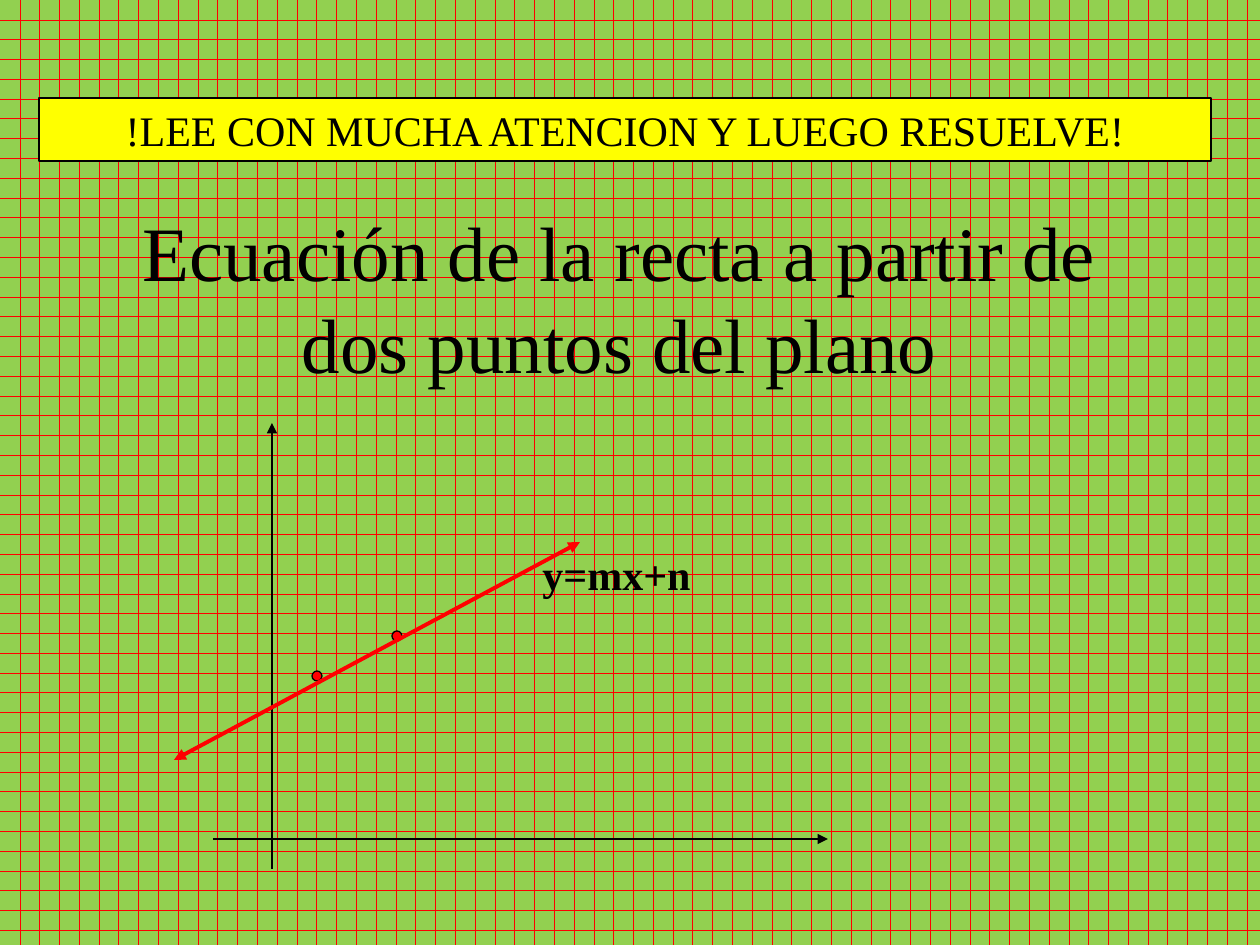
from lxml import etree
from pptx import Presentation
from pptx import util as u
from pptx.dml.color import RGBColor
from pptx.enum import dml, shapes, text
from pptx.oxml.ns import qn

PX = 914400 / 126
FONT = "Times New Roman"
BLACK, RED, YELLOW, GREEN = "000000", "FF0000", "FFFF00", "92D050"


def px(*lengths):
    return [u.Emu(round(n * PX)) for n in lengths]


def color(hex_code):
    return RGBColor.from_string(hex_code)


def set_background(s):
    fill = s.background.fill
    fill.patterned()
    fill.pattern = dml.MSO_PATTERN.DOTTED_GRID
    fill.fore_color.rgb = color(RED)
    fill.back_color.rgb = color(GREEN)


def write(shape, content, size, align, anchor, bold=False):
    tf = shape.text_frame
    tf.word_wrap = True
    tf.auto_size = text.MSO_AUTO_SIZE.NONE
    tf.vertical_anchor = anchor
    p = tf.paragraphs[0]
    p.text = content
    p.alignment = align
    p.font.name = FONT
    p.font.size = u.Pt(size)
    p.font.bold = bold
    p.font.color.rgb = color(BLACK)


def add_title(s, box, content):
    title = s.shapes.title
    title.left, title.top, title.width, title.height = px(*box)
    write(title, content, 44, text.PP_ALIGN.CENTER, text.MSO_ANCHOR.MIDDLE)


def add_arrow(s, ends, hex_code, weight, heads=("tailEnd",)):
    """Draw a straight line with a triangle at each end named in heads."""
    line = s.shapes.add_connector(shapes.MSO_CONNECTOR.STRAIGHT, *px(*ends))
    line.line.color.rgb = color(hex_code)
    line.line.width = u.Pt(weight)
    ln = line.line._get_or_add_ln()
    for head in heads:
        etree.SubElement(ln, qn(f"a:{head}"), type="triangle")
    etree.SubElement(line._element.spPr, qn("a:effectLst"))


def add_filled(s, kind, box, hex_code, weight):
    sp = s.shapes.add_shape(kind, *px(*box))
    sp.shadow.inherit = False
    sp.fill.solid()
    sp.fill.fore_color.rgb = color(hex_code)
    sp.line.color.rgb = color(BLACK)
    sp.line.width = u.Pt(weight)
    return sp


def main():
    prs = Presentation()
    prs.slide_width, prs.slide_height = px(1260, 945)
    s = prs.slides.add_slide(prs.slide_layouts[5])
    set_background(s)
    add_title(s, (84, 195, 1071, 203),
              "Ecuación de la recta a partir de dos puntos del plano")

    for axis in ((272, 869, 272, 423), (213, 839, 828, 839)):
        add_arrow(s, axis, BLACK, 0.75)
    for x, y in ((392, 631), (312, 671)):
        add_filled(s, shapes.MSO_SHAPE.OVAL, (x, y, 10, 10), RED, 0.75)
    add_arrow(s, (174, 760, 580, 542), RED, 2.25, ("headEnd", "tailEnd"))

    equation = s.shapes.add_textbox(*px(530, 542, 189, 63))
    write(equation, "y=mx+n", 24, text.PP_ALIGN.LEFT, text.MSO_ANCHOR.TOP, bold=True)

    banner = add_filled(s, shapes.MSO_SHAPE.RECTANGLE, (39, 98, 1172, 63), YELLOW, 1.5)
    write(banner, "!LEE CON MUCHA ATENCION Y LUEGO RESUELVE!", 24,
          text.PP_ALIGN.CENTER, text.MSO_ANCHOR.TOP)

    prs.save("out.pptx")


if __name__ == "__main__":
    main()
